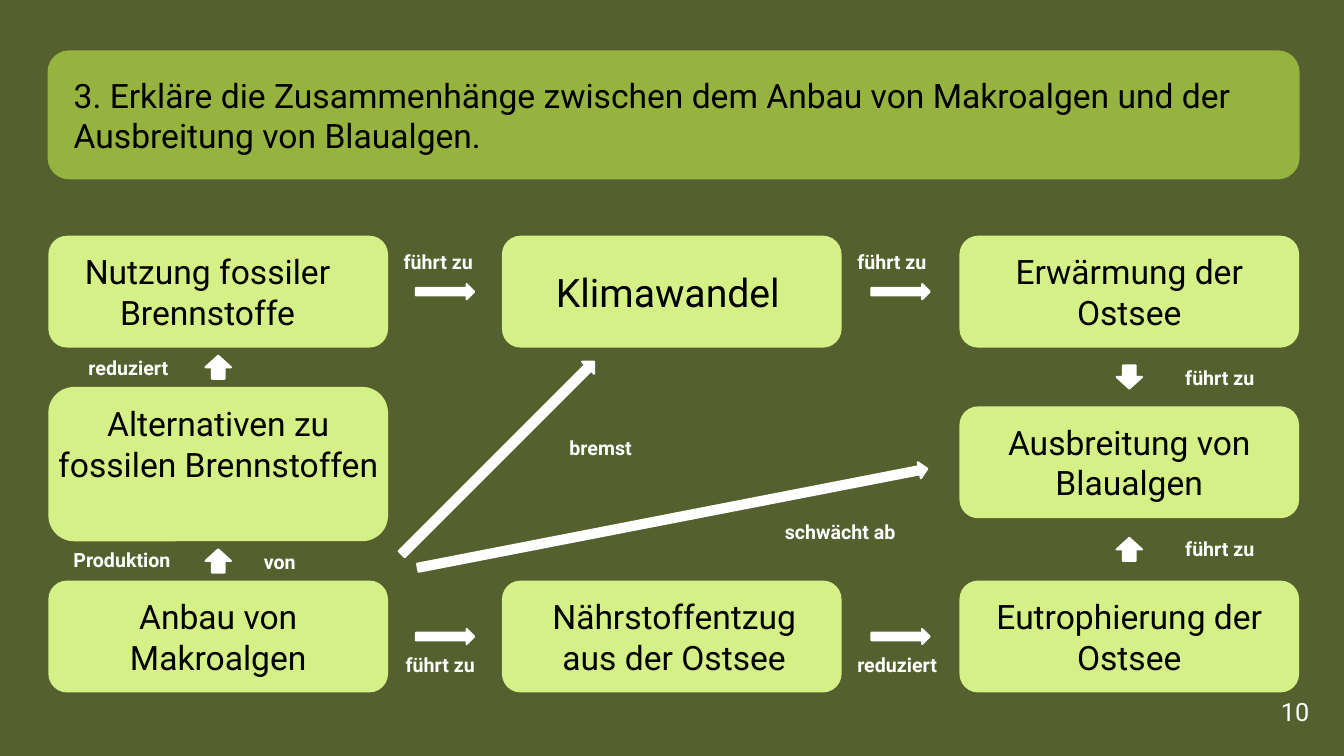
from collections import namedtuple

from pptx import Presentation
from pptx.dml.color import RGBColor
from pptx.enum.shapes import MSO_SHAPE as Preset
from pptx.enum.text import MSO_ANCHOR as Anchor, PP_ALIGN as Align
from pptx.util import Cm, Pt

Box = namedtuple("Box", "left top width height")

BACKGROUND, HEADING, CONCEPT = "54612E", "96B340", "D5F086"
BLACK, WHITE = "000000", "FFFFFF"
FONT = "Roboto"
TALL, SHORT = 3.89, 2.82
CONCEPT_WIDTH = 8.56
COLUMNS = (0, 11.43, 22.96)
TOP_ROW, BOTTOM_ROW = 0, 8.69

CONCEPTS = {
    "fossil": ("Nutzung fossiler Brennstoffe", 0, TOP_ROW, {"shift": -0.27}),
    "climate": ("Klimawandel", 1, TOP_ROW, {"shift": -0.1, "size": 28}),
    "warming": ("Erwärmung der Ostsee", 2, TOP_ROW, {}),
    "alternatives": ("Alternativen zu fossilen Brennstoffen", 0, 3.81,
                     {"height": TALL, "inset": 0, "anchor": Anchor.TOP}),
    "blue_algae": ("Ausbreitung von Blaualgen", 2, 4.3, {}),
    "macro_algae": ("Anbau von Makroalgen", 0, BOTTOM_ROW, {}),
    "nutrients": ("Nährstoffentzug aus der Ostsee", 1, BOTTOM_ROW, {"shift": 0.06}),
    "eutrophication": ("Eutrophierung der Ostsee", 2, BOTTOM_ROW, {}),
}

ACROSS, UPRIGHT = (1.47, 0.38), (0.58, 0.64)
LINKS = [
    ("fossil", "climate", ACROSS, 0, [("führt zu", -1.29, -1.18)]),
    ("climate", "warming", ACROSS, 0, [("führt zu", -1.34, -1.18)]),
    ("macro_algae", "nutrients", ACROSS, 0, [("führt zu", -1.24, 0.29)]),
    ("nutrients", "eutrophication", ACROSS, 0, [("reduziert", -1.34, 0.29)]),
    ("warming", "blue_algae", UPRIGHT, 90, [("führt zu", 1.16, -0.4)]),
    ("eutrophication", "blue_algae", UPRIGHT, 270, [("führt zu", 1.16, -0.44)]),
    ("alternatives", "fossil", UPRIGHT, 270, [("reduziert", -3.52, -0.42)]),
    ("macro_algae", "alternatives", UPRIGHT, 270,
     [("Produktion", -3.9, -0.46), ("von", 0.9, -0.41)]),
]
DIAGONALS = [
    (11.33, 5.6, (6.86, 0.43), 315, [("bremst", 1.55, -0.69)]),
    (15.73, 7.12, (13.08, 0.41), 349, [("schwächt ab", 2.58, -0.08)]),
]


def color(value):
    """Turn a hex string into a colour."""
    return RGBColor.from_string(value)


def write(shape, text, size, ink, align=Align.LEFT, bold=False, **frame_format):
    """Fill a shape with one formatted paragraph."""
    frame = shape.text_frame
    for name, value in {"word_wrap": True, **frame_format}.items():
        setattr(frame, name, value)
    para = frame.paragraphs[0]
    para.alignment = align
    span = para.add_run()
    span.text = text
    for name, value in {"name": FONT, "size": Pt(size), "bold": bold}.items():
        setattr(span.font, name, value)
    span.font.color.rgb = color(ink)


def add_panel(page, preset, box, fill):
    """Draw a flat preset shape in the given box."""
    shape = page.shapes.add_shape(preset, *map(Cm, box))
    shape.shadow.inherit = False
    shape.fill.solid()
    shape.fill.fore_color.rgb = color(fill)
    shape.line.fill.background()
    return shape


def add_text(page, box, text, size, **formats):
    """Place white text in the given box."""
    write(page.shapes.add_textbox(*map(Cm, box)), text, size, WHITE, **formats)


def add_heading(page, box, text):
    """Place the task heading on its rounded panel."""
    panel = add_panel(page, Preset.ROUNDED_RECTANGLE, box, HEADING)
    write(panel, text, 24, BLACK, vertical_anchor=Anchor.MIDDLE,
          margin_left=Cm(0.5), margin_right=Cm(0.98))


def add_concept(page, box, text, size=24, shift=0, inset=0.38, anchor=Anchor.MIDDLE):
    """Place one concept of the map on its rounded panel."""
    panel = add_panel(page, Preset.ROUNDED_RECTANGLE, box, CONCEPT)
    write(panel, text, size, BLACK, Align.CENTER, vertical_anchor=anchor,
          margin_left=Cm(inset + shift), margin_right=Cm(inset - shift),
          margin_top=Cm(0.22), margin_bottom=Cm(0.22))


def add_link(page, x, y, size, angle, labels):
    """Centre an arrow on a point and place its labels around it."""
    length, thickness = size
    box = Box(x - length / 2, y - thickness / 2, length, thickness)
    arrow = add_panel(page, Preset.RIGHT_ARROW, box, WHITE)
    arrow.rotation = angle
    arrow.line.color.rgb = color(WHITE)
    arrow.line.width = Pt(1.5)
    for text, right, down in labels:
        width = 3.56 if len(text) > 9 else 2.82
        add_text(page, Box(x + right, y + down, width, 0.86), text, 14, bold=True)


def middle(start, end, angle):
    """Find the point halfway across the gap between two boxes."""
    if angle == 0:
        return (start.left + start.width + end.left) / 2, start.top + start.height / 2
    upper, lower = sorted((start, end), key=lambda box: box.top)
    return upper.left + upper.width / 2, (upper.top + upper.height + lower.top) / 2


def add_concept_map(page, box):
    """Lay out the concepts and the arrows between them."""
    places = {}
    for name, (text, column, top, options) in CONCEPTS.items():
        formats = dict(options)
        height = formats.pop("height", SHORT)
        places[name] = Box(box.left + COLUMNS[column], box.top + top, CONCEPT_WIDTH, height)
        add_concept(page, places[name], text, **formats)
    for start, end, size, angle, labels in LINKS:
        x, y = middle(places[start], places[end], angle)
        add_link(page, x, y, size, angle, labels)
    for x, y, size, angle, labels in DIAGONALS:
        add_link(page, box.left + x, box.top + y, size, angle, labels)


def main():
    """Build the slide and save the deck."""
    deck = Presentation()
    deck.slide_width, deck.slide_height = Cm(33.87), Cm(19.05)
    page = deck.slides.add_slide(deck.slide_layouts[6])
    page.background.fill.solid()
    page.background.fill.fore_color.rgb = color(BACKGROUND)
    add_heading(page, Box(1.2, 1.27, 31.55, 3.25),
                "3. Erkläre die Zusammenhänge zwischen dem Anbau von Makroalgen "
                "und der Ausbreitung von Blaualgen.")
    add_concept_map(page, Box(1.22, 5.94, 31.52, 11.51))
    add_text(page, Box(31.88, 17.42, 1.55, 1.02), "10", 18, margin_left=Cm(0.4), margin_right=0)
    deck.save("out.pptx")


if __name__ == "__main__":
    main()
